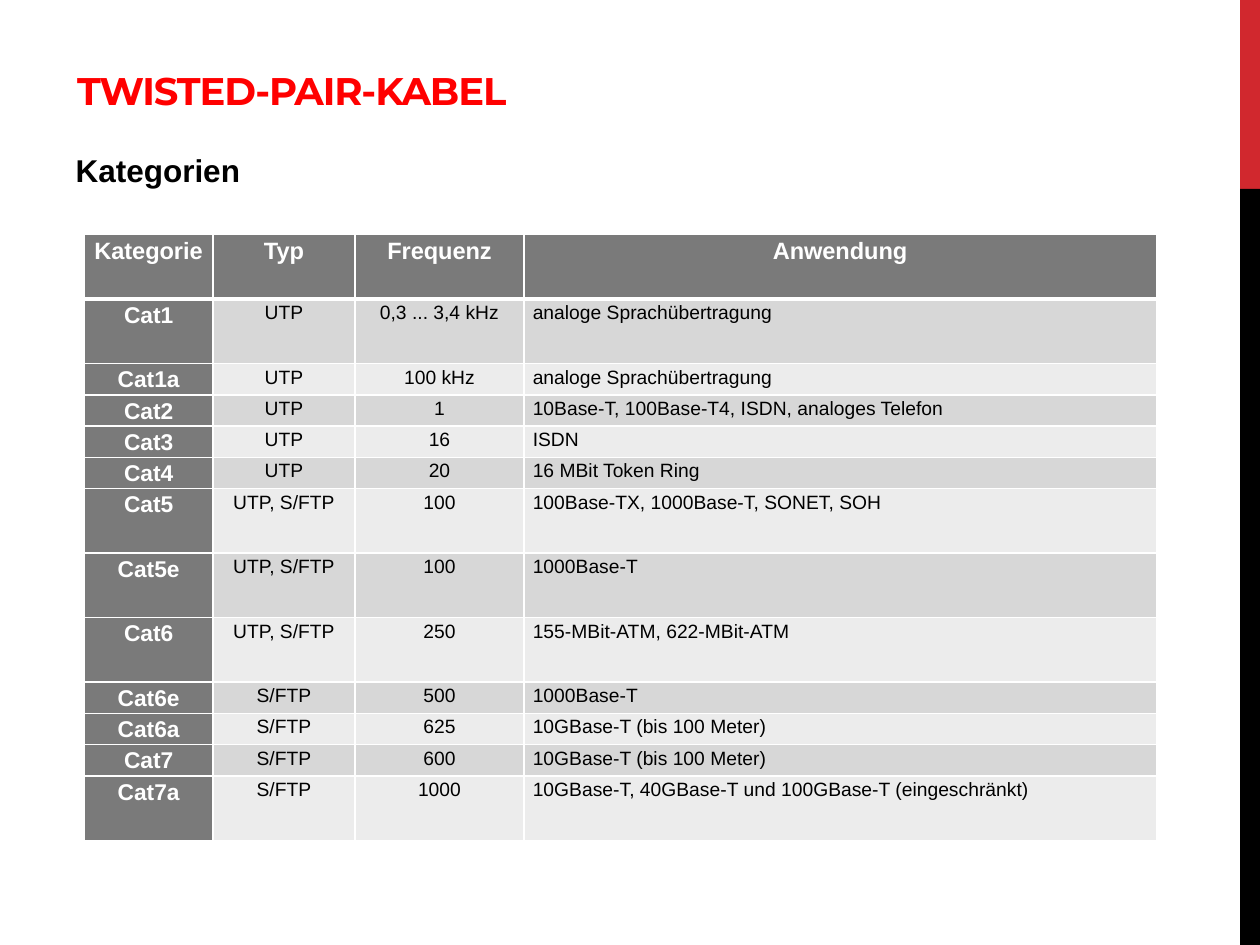
"""Builds a slide with a table of twisted-pair cable categories."""
from lxml import etree
from pptx import Presentation
from pptx import util as u
from pptx.dml.color import RGBColor
from pptx.enum import shapes, text
from pptx.oxml import ns

HEADERS = ["Kategorie", "Typ", "Frequenz", "Anwendung"]
CATEGORIES = [
    ["Cat1", "UTP", "0,3 ... 3,4 kHz", "analoge Sprachübertragung"],
    ["Cat1a", "UTP", "100 kHz", "analoge Sprachübertragung"],
    ["Cat2", "UTP", "1", "10Base-T, 100Base-T4, ISDN, analoges Telefon"],
    ["Cat3", "UTP", "16", "ISDN"],
    ["Cat4", "UTP", "20", "16 MBit Token Ring"],
    ["Cat5", "UTP, S/FTP", "100", "100Base-TX, 1000Base-T, SONET, SOH"],
    ["Cat5e", "UTP, S/FTP", "100", "1000Base-T"],
    ["Cat6", "UTP, S/FTP", "250", "155-MBit-ATM, 622-MBit-ATM"],
    ["Cat6e", "S/FTP", "500", "1000Base-T"],
    ["Cat6a", "S/FTP", "625", "10GBase-T (bis 100 Meter)"],
    ["Cat7", "S/FTP", "600", "10GBase-T (bis 100 Meter)"],
    ["Cat7a", "S/FTP", "1000", "10GBase-T, 40GBase-T und 100GBase-T (eingeschränkt)"],
]
TALL_ROWS = {"Kategorie", "Cat1", "Cat5", "Cat5e", "Cat6", "Cat7a"}
COLUMN_WIDTHS = [2.59, 2.87, 3.4, 12.75]


def color(value):
    return RGBColor.from_string(value)


def write(frame, content, font="Arial", size=11, fill="000000", bold=False,
          align=text.PP_ALIGN.LEFT, line=1.0, before=0, after=0, tracking=0):
    paragraph = frame.paragraphs[0]
    paragraph.alignment = align
    paragraph.line_spacing = line
    paragraph.space_before, paragraph.space_after = u.Pt(before), u.Pt(after)
    run = paragraph.add_run()
    run.text = content
    run.font.name, run.font.size, run.font.bold = font, u.Pt(size), bold
    run.font.color.rgb = color(fill)
    if tracking:
        run._r.get_or_add_rPr().set("spc", str(round(tracking * 100)))
    return paragraph


def add_border(cell, side, width):
    properties = cell._tc.get_or_add_tcPr()
    line = etree.SubElement(properties, ns.qn(f"a:ln{side}"), w=str(u.Pt(width)))
    solid = etree.SubElement(line, ns.qn("a:solidFill"))
    etree.SubElement(solid, ns.qn("a:srgbClr"), val="FFFFFF")


class SlideBuilder:
    red, black, gray = "D1282E", "000000", "7A7A7A"
    bands = ("D7D7D7", "ECECEC")

    def __init__(self, presentation):
        self.slide = presentation.slides.add_slide(presentation.slide_layouts[1])

    def place(self, shape, left, top, width, height):
        shape.left, shape.top = u.Cm(left), u.Cm(top)
        shape.width, shape.height = u.Cm(width), u.Cm(height)
        shape.text_frame.word_wrap = True
        shape.text_frame.auto_size = text.MSO_AUTO_SIZE.NONE
        return shape.text_frame

    def title(self, content, *box):
        frame = self.place(self.slide.shapes.title, *box)
        frame.vertical_anchor = text.MSO_ANCHOR.BOTTOM
        write(frame, content, font="Montserrat", size=22, fill="FF0000",
              bold=True, tracking=-0.6)

    def body(self, content, *box):
        frame = self.place(self.slide.placeholders[1], *box)
        paragraph = write(frame, content, size=18, bold=True, before=3.6, after=6)
        properties = paragraph._p.get_or_add_pPr()
        properties.set("marL", "0")
        properties.set("indent", "0")
        etree.SubElement(properties, ns.qn("a:buNone"))

    def bar(self, fill, *box):
        shape = self.slide.shapes.add_shape(
            shapes.MSO_SHAPE.RECTANGLE, *map(u.Cm, box))
        shape.shadow.inherit = False
        shape.fill.solid()
        shape.fill.fore_color.rgb = color(fill)
        shape.line.fill.background()

    def cell(self, cell, content, row, column):
        header, label = row == 0, column == 0
        cell.margin_left = cell.margin_right = u.Cm(0.18)
        cell.margin_top = cell.margin_bottom = 0
        strong = header or label
        centered = header or column < 3
        write(cell.text_frame, content,
              size=13.5 if header else 13 if label else 11,
              fill="FFFFFF" if strong else self.black, bold=strong, line=1.15,
              align=text.PP_ALIGN.CENTER if centered else text.PP_ALIGN.LEFT)
        widths = {"L": 1, "R": 1, "T": 3 if row == 1 else 1, "B": 3 if header else 1}
        for side, width in widths.items():
            add_border(cell, side, width)
        cell.fill.solid()
        cell.fill.fore_color.rgb = color(
            self.gray if strong else self.bands[(row - 1) % 2])

    def table(self, rows, left, top):
        heights = [1.3 if row[0] in TALL_ROWS else 0.63 for row in rows]
        table = self.slide.shapes.add_table(
            len(rows), len(COLUMN_WIDTHS), u.Cm(left), u.Cm(top),
            u.Cm(sum(COLUMN_WIDTHS)), u.Cm(sum(heights))).table
        for column, width in zip(table.columns, COLUMN_WIDTHS):
            column.width = u.Cm(width)
        for index, (row, height) in enumerate(zip(rows, heights)):
            table.rows[index].height = u.Cm(height)
            for column, content in enumerate(row):
                self.cell(table.cell(index, column), content, index, column)


def main():
    presentation = Presentation()
    presentation.slide_width, presentation.slide_height = u.Cm(25.4), u.Cm(19.05)
    builder = SlideBuilder(presentation)
    builder.bar(builder.red, 25, 0, 0.4, 3.81)
    builder.bar(builder.black, 25, 3.81, 0.4, 15.24)
    builder.title("TWISTED-PAIR-KABEL", 1.3, 0.91, 23.39, 1.5)
    builder.body("Kategorien", 1.27, 2.92, 22.23, 14.6)
    builder.table([HEADERS] + CATEGORIES, 1.7, 4.73)
    presentation.save("out.pptx")


if __name__ == "__main__":
    main()
